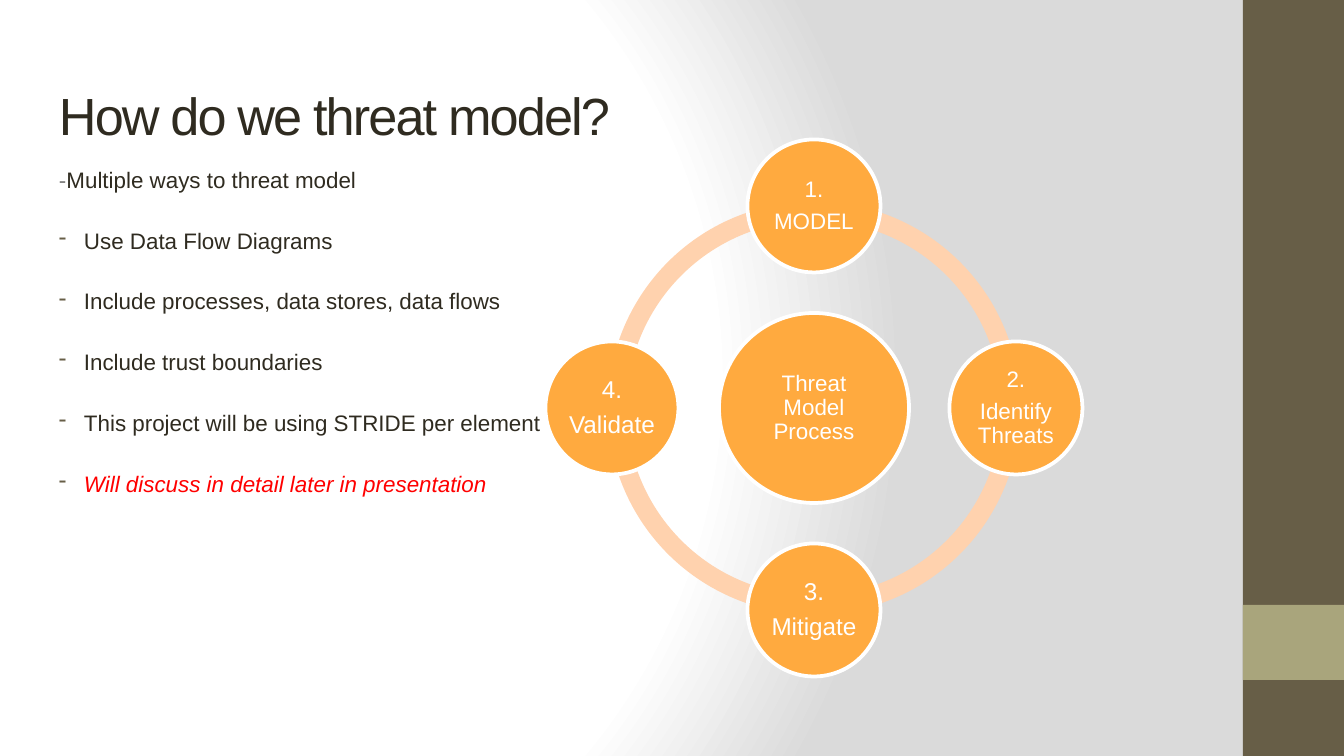
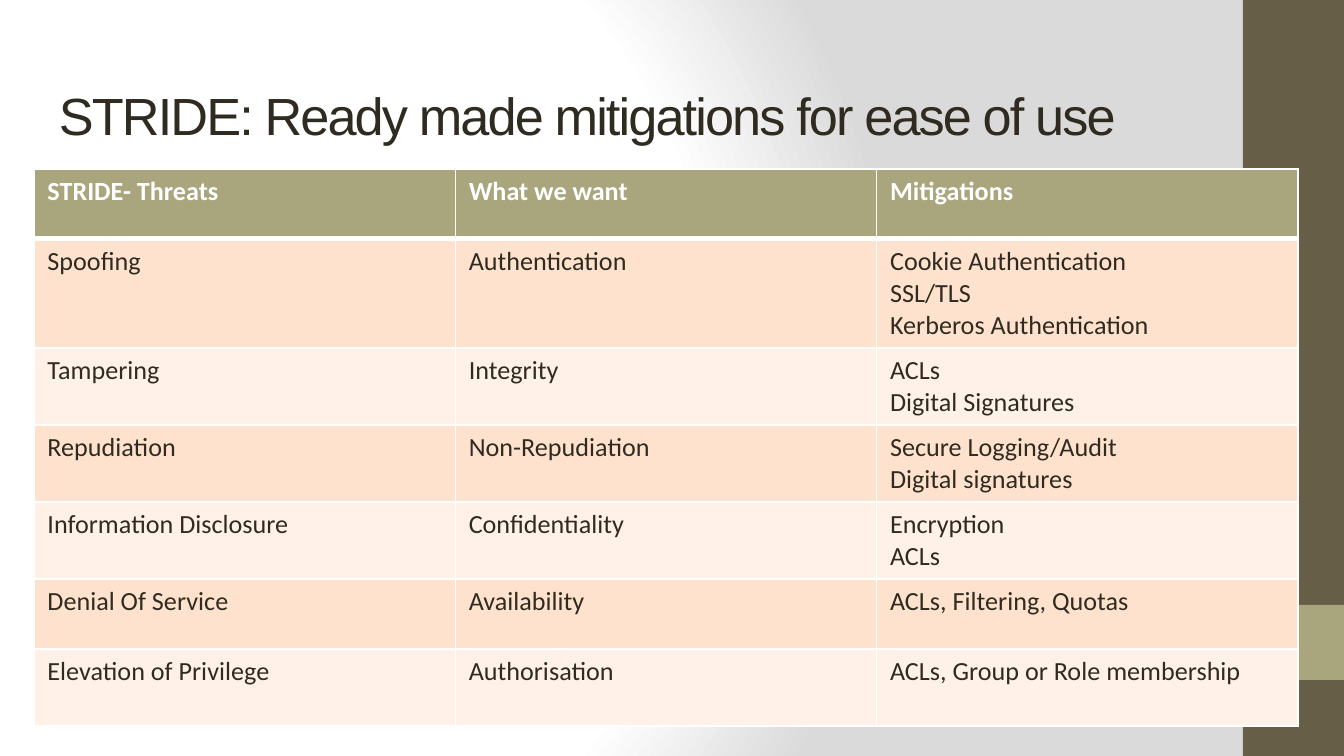
import math

import lxml.etree
import pptx
import pptx.dml.color
import pptx.enum.shapes
import pptx.enum.text
import pptx.oxml
import pptx.oxml.ns
import pptx.util

PX = 914400 / 134.4
SLIDE_W, SLIDE_H = 1344, 756
COLORS = {
    "white": "FFFFFF", "grey": "DADADA", "text": "2F2B20", "dash": "7B7B7A",
    "brown": "675E47", "olive": "A9A57C", "orange": "FFAA3F", "ring": "FFD2AE",
    "band_dark": "FFE2CD", "band_light": "FFF1E8", "red": "FF0000",
}
SHAPE = pptx.enum.shapes.MSO_SHAPE
CENTER = pptx.enum.text.PP_ALIGN.CENTER
ANCHOR = pptx.enum.text.MSO_ANCHOR
qn = pptx.oxml.ns.qn

BULLETS = [
    ("Use Data Flow Diagrams", {}),
    ("Include processes, data stores, data flows", {}),
    ("Include trust boundaries", {}),
    ("This project will be using STRIDE per element", {}),
    ("Will discuss in detail later in presentation", {"color": "red", "italic": True}),
]
STEPS = [  # clockwise from the top: lines, text size
    (["1.", "MODEL"], 12),
    (["2.", "Identify Threats"], 12),
    (["3.", "Mitigate"], 13),
    (["4.", "Validate"], 13),
]
MITIGATIONS = [
    (70, ["STRIDE- Threats", "What we want", "Mitigations"]),
    (109, ["Spoofing", "Authentication",
           "Cookie Authentication\nSSL/TLS\nKerberos Authentication"]),
    (77, ["Tampering", "Integrity", "ACLs\nDigital Signatures"]),
    (77, ["Repudiation", "Non-Repudiation", "Secure Logging/Audit\nDigital signatures"]),
    (77, ["Information Disclosure", "Confidentiality", "Encryption\nACLs"]),
    (70, ["Denial Of Service", "Availability", "ACLs, Filtering, Quotas"]),
    (77, ["Elevation of Privilege", "Authorisation", "ACLs, Group or Role membership"]),
]


def px(*lengths):
    return [pptx.util.Emu(round(v * PX)) for v in lengths]


def rgb(name):
    return pptx.dml.color.RGBColor.from_string(COLORS[name])


def set_attrs(target, **values):
    for name, value in values.items():
        setattr(target, name, value)


def add_run(p, text, size=12, color="text", font="Arial", **extra):
    r = p.add_run()
    r.text = text
    set_attrs(r.font, name=font, size=pptx.util.Pt(size), **extra)
    r.font.color.rgb = rgb(color)
    return r


def format_frame(tf, insets, anchor=ANCHOR.TOP):
    left, top, right, bottom = px(*insets)
    set_attrs(tf, word_wrap=True, auto_size=pptx.enum.text.MSO_AUTO_SIZE.NONE,
              vertical_anchor=anchor, margin_left=left, margin_top=top,
              margin_right=right, margin_bottom=bottom)


def add_filled(shapes, kind, box, color, outline=None):
    sp = shapes.add_shape(kind, *px(*box))
    sp.shadow.inherit = False
    sp.fill.solid()
    sp.fill.fore_color.rgb = rgb(color)
    if outline:
        sp.line.color.rgb = rgb(outline)
        sp.line.width = pptx.util.Pt(2)
    else:
        sp.line.fill.background()
    return sp


def set_background(master):
    """Radial fade from white on the left to grey on the right."""
    master.background.fill.gradient()
    old = master.element.find(".//" + qn("p:bgPr") + "/" + qn("a:gradFill"))
    stops = "".join(
        f'<a:gs pos="{pos}000"><a:srgbClr val="{COLORS[name]}"/></a:gs>'
        for pos, name in [(0, "white"), (75, "white"), (100, "grey")])
    old.getparent().replace(old, pptx.oxml.parse_xml(
        f'<a:gradFill {pptx.oxml.ns.nsdecls("a")} rotWithShape="1"><a:gsLst>{stops}</a:gsLst>'
        '<a:path path="circle"><a:fillToRect l="20000" t="50000" r="100000" b="50000"/>'
        '</a:path></a:gradFill>'))


def add_slide(prs, title):
    """Title-only slide with the side bands."""
    s = prs.slides.add_slide(prs.slide_layouts[5])
    add_filled(s.shapes, SHAPE.RECTANGLE, (1243, 0, 101, SLIDE_H), "brown")
    add_filled(s.shapes, SHAPE.RECTANGLE, (1243, 605, 101, 75), "olive")
    sp = s.shapes.title
    left, top, width, height = px(46, 66, 1252, 85)
    set_attrs(sp, left=left, top=top, width=width, height=height)
    format_frame(sp.text_frame, (13, 17, 13, 9))
    p = sp.text_frame.paragraphs[0]
    p.alignment = pptx.enum.text.PP_ALIGN.LEFT
    r = add_run(p, title, 28)
    r.font._element.set("spc", "-100")
    return s


def add_bullets(s, box):
    tf = s.shapes.add_textbox(*px(*box)).text_frame
    format_frame(tf, (13, 13, 13, 13))
    p = tf.paragraphs[0]
    p.line_spacing = 1.15
    add_run(p, "-", color="dash")
    add_run(p, "Multiple ways to threat model")
    indent = px(25)[0]
    for text, style in BULLETS:
        p = tf.add_paragraph()
        set_attrs(p, line_spacing=1.15, space_before=pptx.util.Pt(16))
        add_run(p, text, **style)
        pPr = p._p.get_or_add_pPr()
        pPr.set("marL", str(indent))
        pPr.set("indent", str(-indent))
        color = lxml.etree.SubElement(pPr, qn("a:buClr"))
        lxml.etree.SubElement(color, qn("a:srgbClr")).set("val", COLORS["brown"])
        lxml.etree.SubElement(pPr, qn("a:buChar")).set("char", "-")


def add_disc(shapes, cx, cy, diameter, lines, size):
    """Outlined circle centred on (cx, cy) with centred text."""
    box = (cx - diameter / 2, cy - diameter / 2, diameter, diameter)
    tf = add_filled(shapes, SHAPE.OVAL, box, "orange", "white").text_frame
    format_frame(tf, (2, 2, 2, 2), ANCHOR.MIDDLE)
    for i, line in enumerate(lines):
        p = tf.add_paragraph() if i else tf.paragraphs[0]
        set_attrs(p, alignment=CENTER, line_spacing=0.9,
                  space_before=pptx.util.Pt(0.35 * size if i else 0))
        add_run(p, line, size, "white")


def add_cycle(s, box):
    """Ring of four arcs with a hub and one disc per step."""
    left, top, side = box
    cx, cy = left + side / 2, top + side / 2
    ring, orbit = 413, 202
    shapes = s.shapes.add_group_shape().shapes
    for start in (180, 90, 0, 270):
        sp = add_filled(shapes, SHAPE.BLOCK_ARC,
                        (cx - ring / 2, cy - ring / 2, ring, ring), "ring")
        # angles are stored in 60000ths of a degree, adjustments in 100000ths
        for i, value in enumerate((start * 0.6, (start + 90) % 360 * 0.6, 0.046)):
            sp.adjustments[i] = value
    add_disc(shapes, cx, cy, 190, ["Threat Model Process"], 12)
    for i, (lines, size) in enumerate(STEPS):
        angle = math.tau * i / len(STEPS)
        add_disc(shapes, cx + orbit * math.sin(angle), cy - orbit * math.cos(angle),
                 133, lines, size)


def add_borders(cell, widths):
    """White cell borders; widths in points for left, right, top, bottom."""
    tcPr = cell._tc.get_or_add_tcPr()
    for i, (side, width) in enumerate(zip("LRTB", widths)):
        tcPr.insert(i, pptx.oxml.parse_xml(
            f'<a:ln{side} {pptx.oxml.ns.nsdecls("a")} w="{width * 12700}"><a:solidFill>'
            f'<a:srgbClr val="{COLORS["white"]}"/></a:solidFill></a:ln{side}>'))


def add_mitigation_table(s, box):
    rows, cols = len(MITIGATIONS), len(MITIGATIONS[0][1])
    table = s.shapes.add_table(rows, cols, *px(*box)).table
    for column in table.columns:
        column.width = px(box[2] / cols)[0]
    for i, (height, texts) in enumerate(MITIGATIONS):
        table.rows[i].height = px(height)[0]
        header = i == 0
        fill = "olive" if header else "band_dark" if i % 2 else "band_light"
        for j, text in enumerate(texts):
            cell = table.cell(i, j)
            cell.fill.solid()
            cell.fill.fore_color.rgb = rgb(fill)
            add_borders(cell, (1, 1, 3 if i == 1 else 1, 3 if header else 1))
            for k, line in enumerate(text.split("\n")):
                tf = cell.text_frame
                p = tf.add_paragraph() if k else tf.paragraphs[0]
                add_run(p, line, 14, "white" if header else "text", "Calibri", bold=header)


def main():
    prs = pptx.Presentation()
    prs.slide_width, prs.slide_height = px(SLIDE_W, SLIDE_H)
    set_background(prs.slide_master)

    s = add_slide(prs, "How do we threat model?")
    add_bullets(s, (46, 149, 1298, 521))
    add_cycle(s, (546, 140, 536))

    s = add_slide(prs, "STRIDE: Ready made mitigations for ease of use")
    add_mitigation_table(s, (34, 169, 1264, 557))

    prs.save("out.pptx")


if __name__ == "__main__":
    main()
